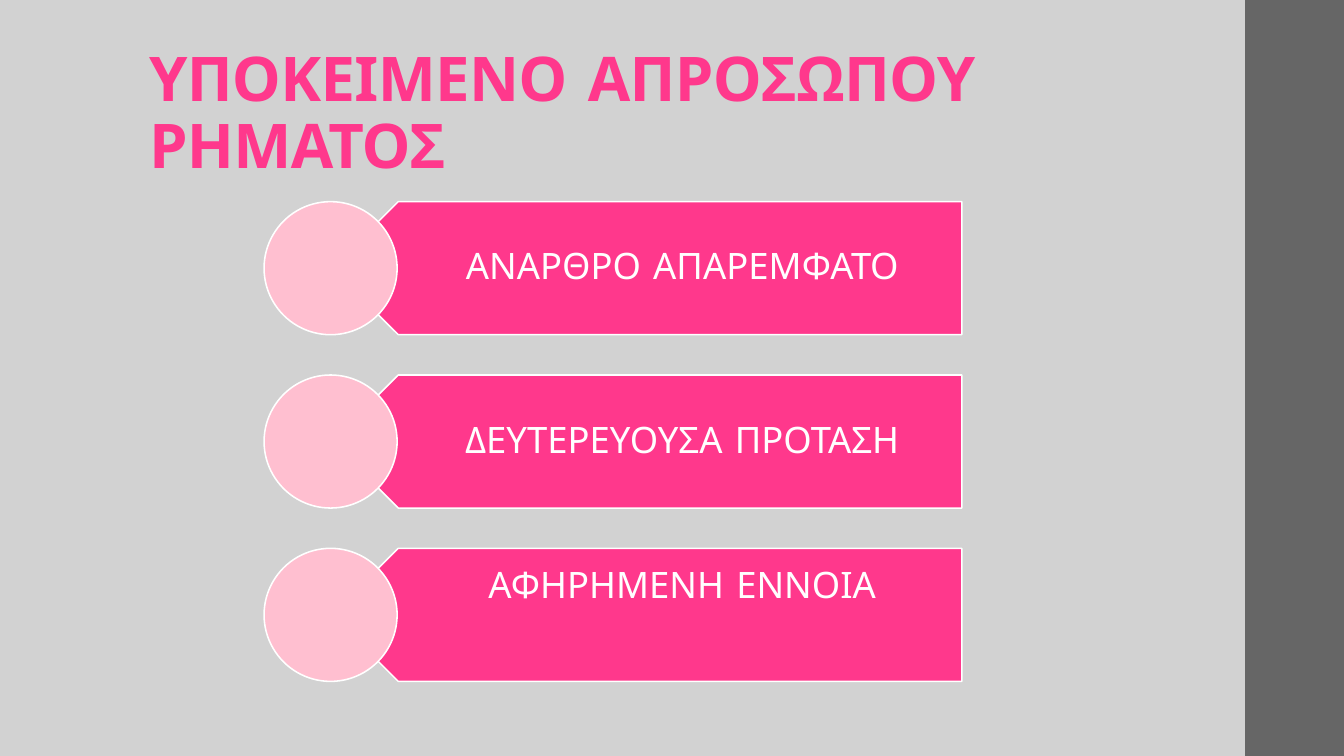
from dataclasses import dataclass

from pptx import Presentation
from pptx.dml.color import RGBColor
from pptx.enum.shapes import MSO_SHAPE
from pptx.enum.text import MSO_ANCHOR, PP_ALIGN
from pptx.shapes.autoshape import Shape
from pptx.slide import Slide
from pptx.util import Inches, Pt

SLIDE_WIDTH = Inches(13.33)
SLIDE_HEIGHT = Inches(7.5)
FONT = "Comic Neue"

GREY = RGBColor(0xD2, 0xD2, 0xD2)
DARK_GREY = RGBColor(0x66, 0x66, 0x66)
PINK = RGBColor(0xFF, 0x38, 0x8C)
PALE_PINK = RGBColor(0xFF, 0xBF, 0xD0)
WHITE = RGBColor(0xFF, 0xFF, 0xFF)


@dataclass(frozen=True)
class Area:
    """Percentages of the slide's width and height."""

    left: float
    top: float
    width: float
    height: float

    def bounds(self) -> tuple[int, int, int, int]:
        return (
            int(SLIDE_WIDTH * self.left / 100),
            int(SLIDE_HEIGHT * self.top / 100),
            int(SLIDE_WIDTH * self.width / 100),
            int(SLIDE_HEIGHT * self.height / 100),
        )


@dataclass(frozen=True)
class SubjectKind:
    wording: str
    bottom_inset: float = 0.11


SUBJECT_KINDS = (
    SubjectKind("ΑΝΑΡΘΡΟ ΑΠΑΡΕΜΦΑΤΟ"),
    SubjectKind("ΔΕΥΤΕΡΕΥΟΥΣΑ ΠΡΟΤΑΣΗ"),
    SubjectKind("ΑΦΗΡΗΜΕΝΗ ΕΝΝΟΙΑ", bottom_inset=0.67),
)
FIRST_ROW = 26.67
ROW_STEP = 22.93
ROW_HEIGHT = 17.6


def apply_format(target: object, values: dict[str, object]) -> None:
    for attribute, value in values.items():
        setattr(target, attribute, value)


def add_figure(slide: Slide, kind: MSO_SHAPE, area: Area, fill: RGBColor,
               outlined: bool = True) -> Shape:
    figure = slide.shapes.add_shape(kind, *area.bounds())
    figure.shadow.inherit = False
    figure.fill.solid()
    figure.fill.fore_color.rgb = fill
    if outlined:
        figure.line.color.rgb = WHITE
        figure.line.width = Pt(1.1)
    else:
        figure.line.fill.background()
    return figure


def add_wording(slide: Slide, area: Area, wording: str, color: RGBColor,
                frame_format: dict[str, object],
                paragraph_format: dict[str, object],
                font_format: dict[str, object], spacing: int = 0) -> None:
    frame = slide.shapes.add_textbox(*area.bounds()).text_frame
    apply_format(frame, {"word_wrap": True} | frame_format)
    paragraph = frame.paragraphs[0]
    apply_format(paragraph, {"line_spacing": 0.9} | paragraph_format)
    run = paragraph.add_run()
    run.text = wording
    apply_format(run.font, {"name": FONT} | font_format)
    run.font.color.rgb = color
    if spacing:
        run.font._element.set("spc", str(spacing))


def add_heading(slide: Slide) -> None:
    add_wording(
        slide, Area(10.35, 3.87, 79.5, 20.8), "ΥΠΟΚΕΙΜΕΝΟ ΑΠΡΟΣΩΠΟΥ ΡΗΜΑΤΟΣ", PINK,
        {"vertical_anchor": MSO_ANCHOR.BOTTOM,
         "margin_left": Inches(0.1), "margin_right": Inches(0.1),
         "margin_top": Inches(0.03), "margin_bottom": Inches(0.05)},
        {"alignment": PP_ALIGN.LEFT},
        {"size": Pt(44), "bold": True},
        spacing=-50,
    )


def add_subject_kind(slide: Slide, row: int, kind: SubjectKind) -> None:
    top = FIRST_ROW + row * ROW_STEP
    banner = add_figure(slide, MSO_SHAPE.PENTAGON,
                        Area(24.68, top, 46.88, ROW_HEIGHT), PINK)
    banner.rotation = 180
    add_wording(
        slide, Area(27.15, top, 44.41, ROW_HEIGHT), kind.wording, WHITE,
        {"vertical_anchor": MSO_ANCHOR.MIDDLE,
         "margin_left": Inches(0.58), "margin_right": Inches(0.2),
         "margin_top": Inches(0.11), "margin_bottom": Inches(kind.bottom_inset)},
        {"alignment": PP_ALIGN.CENTER},
        {"size": Pt(26)},
    )
    add_figure(slide, MSO_SHAPE.OVAL, Area(19.65, top, 9.9, ROW_HEIGHT), PALE_PINK)


def main() -> None:
    presentation = Presentation()
    apply_format(presentation, {"slide_width": SLIDE_WIDTH, "slide_height": SLIDE_HEIGHT})
    slide = presentation.slides.add_slide(presentation.slide_layouts[6])
    slide.background.fill.solid()
    slide.background.fill.fore_color.rgb = GREY
    add_figure(slide, MSO_SHAPE.RECTANGLE, Area(92.65, 0, 7.35, 100), DARK_GREY,
               outlined=False)
    add_heading(slide)
    for row, kind in enumerate(SUBJECT_KINDS):
        add_subject_kind(slide, row, kind)
    presentation.save("out.pptx")


if __name__ == "__main__":
    main()
